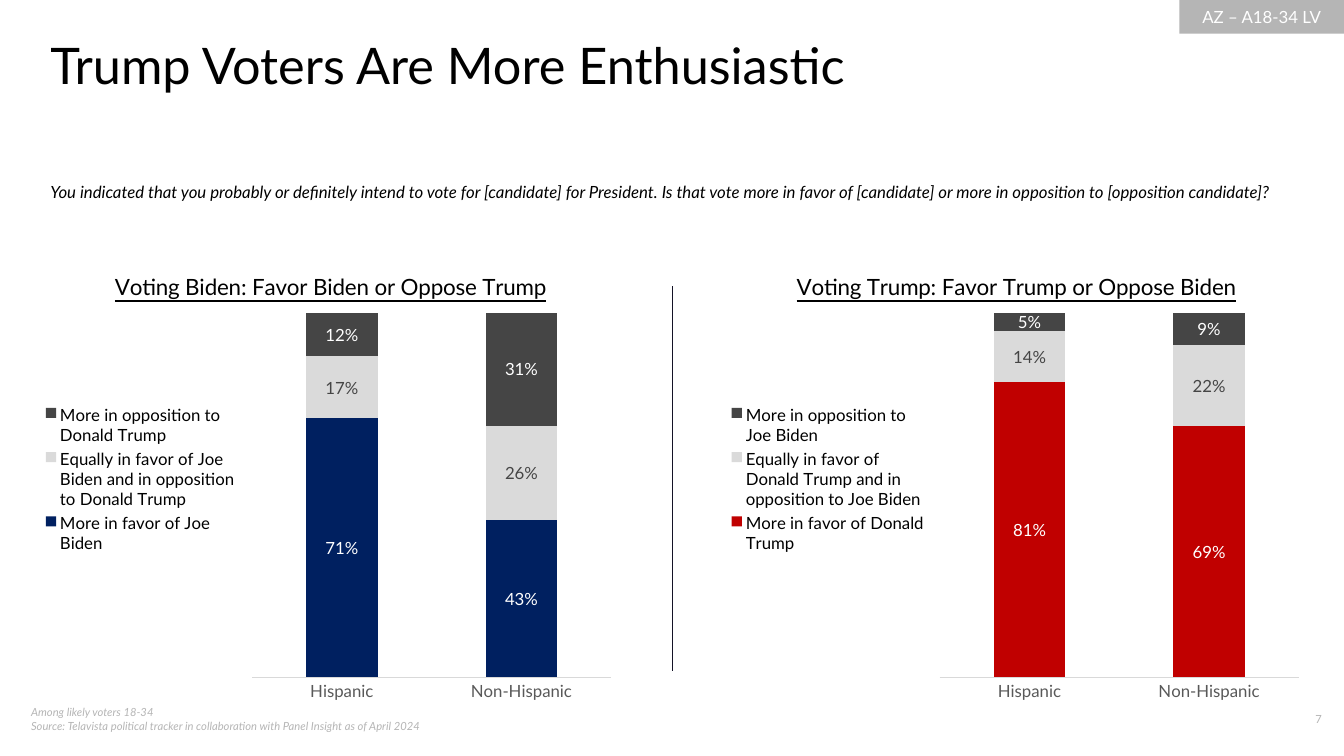
from dataclasses import dataclass

from lxml.etree import SubElement
from pptx import Presentation
from pptx.chart.chart import Chart
from pptx.chart.data import CategoryChartData
from pptx.dml.color import RGBColor
from pptx.enum.chart import XL_CHART_TYPE as ChartType
from pptx.enum.chart import XL_LABEL_POSITION as LabelPosition
from pptx.enum.chart import XL_LEGEND_POSITION as LegendPosition
from pptx.enum.chart import XL_TICK_MARK as TickMark
from pptx.enum.shapes import MSO_CONNECTOR as Connector
from pptx.enum.shapes import MSO_SHAPE as Shape
from pptx.enum.text import MSO_ANCHOR as Anchor
from pptx.enum.text import PP_ALIGN as Align
from pptx.oxml.ns import qn
from pptx.util import Emu, Inches, Pt

FONT = "Lato"
BLACK, WHITE = "000000", "FFFFFF"
MUTED, CHARCOAL, PALE = "B5B5B5", "454545", "DADADA"
COLUMNS, ROWS = 80, 45
GROUPS = ("Hispanic", "Non-Hispanic")

deck = Presentation()
deck.slide_width, deck.slide_height = Inches(13.33), Inches(7.5)
page = deck.slides.add_slide(deck.slide_layouts[6])


@dataclass
class Area:
    column: float
    row: float
    columns: float
    rows: float

    def place(self) -> tuple[Emu, Emu, Emu, Emu]:
        return across(self.column), down(self.row), across(self.columns), down(self.rows)


@dataclass
class Label:
    area: Area
    lines: tuple[str, ...]
    size: float
    color: str = BLACK
    italic: bool = False
    align: Align = Align.LEFT
    inset: bool = False
    fill: str = ""


@dataclass
class Answer:
    name: str
    shares: tuple[float, float]
    fill: str
    text_color: str


@dataclass
class VoterPanel:
    column: float
    title: str
    title_left: float
    answers: tuple[Answer, ...]


def across(columns: float) -> Emu:
    return Emu(round(deck.slide_width * columns / COLUMNS))


def down(rows: float) -> Emu:
    return Emu(round(deck.slide_height * rows / ROWS))


def rgb(color: str) -> RGBColor:
    return RGBColor.from_string(color)


def style(font, size: float, color: str, italic: bool = False) -> None:
    font.name, font.size, font.italic = FONT, Pt(size), italic
    font.color.rgb = rgb(color)


def add_label(label: Label) -> None:
    if label.fill:
        box = page.shapes.add_shape(Shape.RECTANGLE, *label.area.place())
        box.shadow.inherit = False
        box.fill.solid()
        box.fill.fore_color.rgb = rgb(label.fill)
        box.line.fill.background()
    else:
        box = page.shapes.add_textbox(*label.area.place())
    frame = box.text_frame
    frame.word_wrap = True
    frame.vertical_anchor = Anchor.MIDDLE if label.fill else Anchor.TOP
    if not label.inset:
        frame.margin_left = frame.margin_right = frame.margin_top = frame.margin_bottom = 0
    para = frame.paragraphs[0]
    para.alignment = label.align
    for number, line in enumerate(label.lines):
        if number:
            para.add_line_break()
        span = para.add_run()
        span.text = line
        style(span.font, label.size, label.color, label.italic)


def set_layout(parent, index: int, inner: bool = False, **shares: float) -> None:
    """Fix a chart part at shares of the chart's size."""
    for old in parent.findall(qn("c:layout")):
        parent.remove(old)
    layout = SubElement(parent, qn("c:layout"))
    parent.insert(index, layout)
    manual = SubElement(layout, qn("c:manualLayout"))
    if inner:
        SubElement(manual, qn("c:layoutTarget")).set("val", "inner")
    for mode in ("xMode", "yMode"):
        SubElement(manual, qn(f"c:{mode}")).set("val", "edge")
    for side, share in shares.items():
        SubElement(manual, qn(f"c:{side}")).set("val", str(share))


def style_axes(chart: Chart) -> None:
    groups, values = chart.category_axis, chart.value_axis
    groups.major_tick_mark = groups.minor_tick_mark = TickMark.NONE
    groups.format.line.color.rgb = rgb("D9D9D9")
    groups.format.line.width = Pt(0.75)
    style(groups.tick_labels.font, 12, "595959")
    values.minimum_scale, values.maximum_scale = 0, 1
    values.has_major_gridlines = False
    values.visible = False


def add_panel(panel: VoterPanel) -> None:
    data = CategoryChartData(number_format="0%")
    data.categories = GROUPS
    for answer in panel.answers:
        data.add_series(answer.name, answer.shares)
    area = Area(panel.column, 14.76, 35.05, 27.48)
    chart = page.shapes.add_chart(ChartType.COLUMN_STACKED, *area.place(), data).chart
    style(chart.font, 10, BLACK)
    style_axes(chart)

    # Chart title
    chart.has_title = True
    span = chart.chart_title.text_frame.paragraphs[0].add_run()
    span.text = panel.title
    style(span.font, 16, BLACK)
    span.font.bold, span.font.underline = False, True

    # Legend
    chart.has_legend = True
    chart.legend.position = LegendPosition.LEFT
    chart.legend.include_in_layout = False
    style(chart.legend.font, 12, BLACK)

    # Stacked bars and their labels
    plot = chart.plots[0]
    plot.vary_by_categories = False
    plot.gap_width, plot.overlap = 150, 100
    for series, answer in zip(plot.series, panel.answers):
        series.format.fill.solid()
        series.format.fill.fore_color.rgb = rgb(answer.fill)
        labels = series.data_labels
        labels.show_value = True
        labels.position = LabelPosition.CENTER
        labels.number_format, labels.number_format_is_linked = "0%", False
        style(labels.font, 12, answer.text_color)

    root = chart.element if hasattr(chart, "element") else chart._chartSpace
    set_layout(root.find(".//" + qn("c:title")), 1, x=panel.title_left, y=0.04)
    set_layout(root.find(".//" + qn("c:plotArea")), 0, inner=True, x=0.37, y=0.14, w=0.61, h=0.79)
    set_layout(root.find(".//" + qn("c:legend")), 1, x=0.01, y=0.33, w=0.34, h=0.34)


LABELS = (
    Label(Area(70.2, 0, 9.8, 2), ("AZ – A18-34 LV",), 12, WHITE,
          align=Align.CENTER, inset=True, fill=MUTED),
    Label(Area(1.26, 41.7, 30.67, 2.4),
          ("Among likely voters 18-34",
           "Source: Telavista political tracker in collaboration with Panel Insight as of April 2024"),
          8, MUTED, italic=True, inset=True),
    Label(Area(74, 42.12, 5.28, 1.62), ("7",), 8, MUTED, align=Align.RIGHT, inset=True),
    Label(Area(3, 2, 72, 3.66), ("Trump Voters Are More Enthusiastic",), 36),
    Label(Area(3, 10.8, 74.36, 1.2),
          ("You indicated that you probably or definitely intend to vote for [candidate] for "
           "President. Is that vote more in favor of [candidate] or more in opposition to "
           "[opposition candidate]?",), 12, italic=True),
)

PANELS = (
    VoterPanel(2.04, "Voting Biden: Favor Biden or Oppose Trump", 0.13, (
        Answer("More in favor of Joe Biden", (0.71, 0.43), "002060", WHITE),
        Answer("Equally in favor of Joe Biden and in opposition to Donald Trump",
               (0.17, 0.26), PALE, CHARCOAL),
        Answer("More in opposition to Donald Trump", (0.12, 0.31), CHARCOAL, WHITE))),
    VoterPanel(42.97, "Voting Trump: Favor Trump or Oppose Biden", 0.12, (
        Answer("More in favor of Donald Trump", (0.81, 0.69), "C00000", WHITE),
        Answer("Equally in favor of Donald Trump and in opposition to Joe Biden",
               (0.14, 0.22), PALE, CHARCOAL),
        Answer("More in opposition to Joe Biden", (0.05, 0.09), CHARCOAL, WHITE))),
)

for label in LABELS:
    add_label(label)
for panel in PANELS:
    add_panel(panel)

# Divider between the two panels
divider = page.shapes.add_connector(
    Connector.STRAIGHT, across(40), down(17.04), across(40), down(39.96))
divider.line.color.rgb, divider.line.width = rgb("141327"), Pt(0.5)
SubElement(divider.element.spPr, qn("a:effectLst"))

deck.save("out.pptx")
